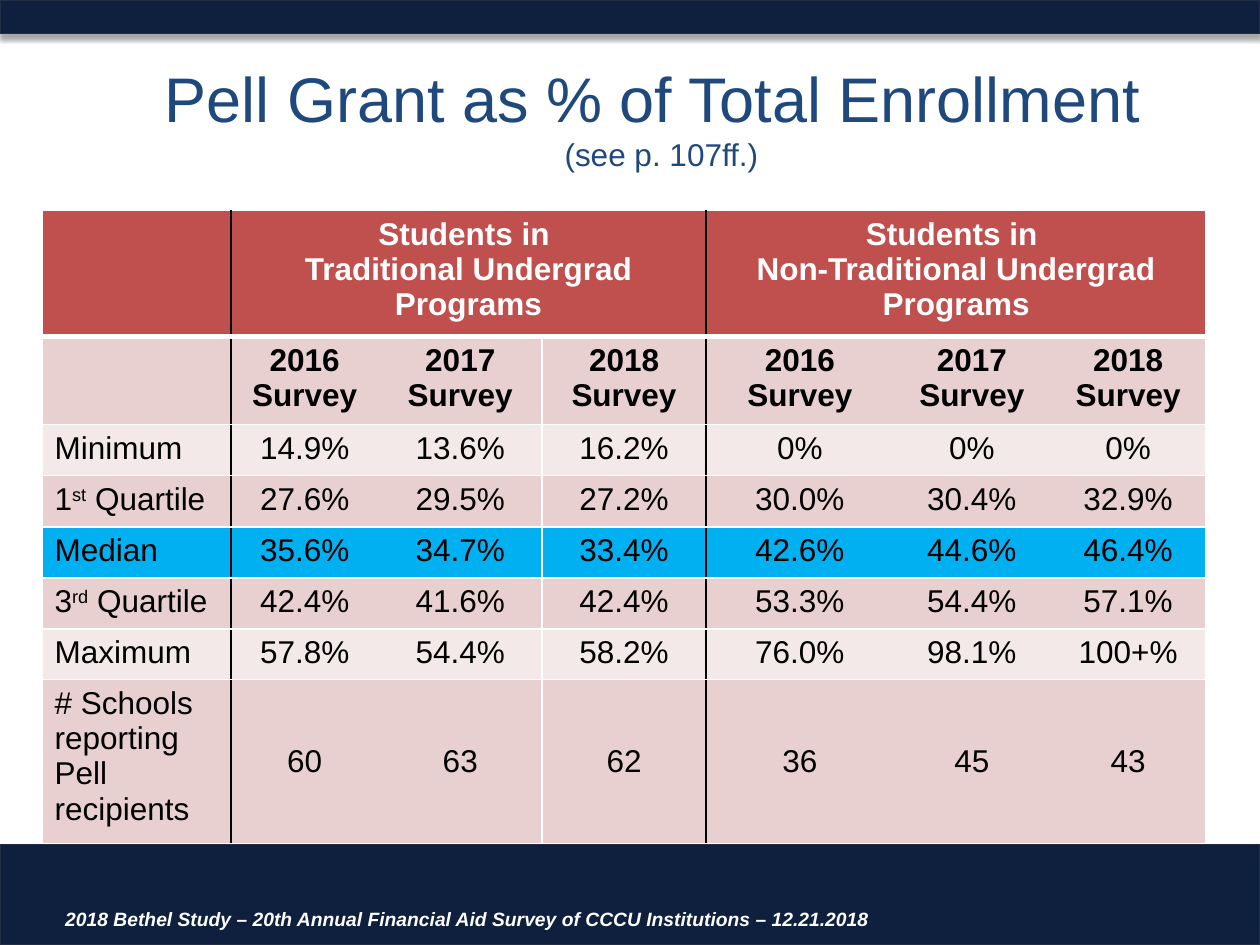
from dataclasses import dataclass
from typing import NamedTuple

from lxml.etree import SubElement
from pptx import Presentation
from pptx.dml.color import RGBColor as RGB
from pptx.enum.shapes import MSO_SHAPE as Shape
from pptx.enum.text import MSO_ANCHOR as Anchor, PP_ALIGN as Align
from pptx.oxml.ns import qn
from pptx.util import Pt


@dataclass(frozen=True)
class Theme:
    font: str = "Arial"
    navy: str = "0E203E"
    navy_line: str = "222D46"
    title: str = "1F497D"
    head: str = "C0504D"
    dark_band: str = "E8D0D0"
    light_band: str = "F4E9E9"
    highlight: str = "00B0F0"
    white: str = "FFFFFF"
    black: str = "000000"
    title_size: float = 36
    body_size: float = 18
    footer_size: float = 11


class Box(NamedTuple):
    left: float
    top: float
    width: float
    height: float

    def lengths(self) -> list:
        return [Pt(v) for v in self]


class Row(NamedTuple):
    label: str  # "|" marks the start and end of a superscript
    values: list[str]
    fill: str
    height: float = 29.2
    bold: bool = False
    anchor: Anchor = Anchor.TOP


class Edge(NamedTuple):
    color: str
    width: float = 1


T = Theme()
WHITE, BLACK, HEAD_RULE = Edge(T.white), Edge(T.black), Edge(T.white, 3)
BARS = [Box(0, 0, 720, 19.4), Box(0, 482.4, 720, 57.6)]
TABLE = Box(24, 120.2, 666, 361.4)
COL_WIDTHS = [108, 84.2, 93.6, 93.6, 107.3, 89.3, 89.3]
# Vertical rules by column boundary; boundaries not listed have none
RULES = {0: WHITE, 1: BLACK, 3: WHITE, 4: BLACK, 7: WHITE}
GROUPS = {1: "Students in \nTraditional Undergrad Programs",
          4: "Students in \nNon-Traditional Undergrad Programs"}
SURVEYS = [f"{year} Survey" for year in (2016, 2017, 2018)]
ROWS = [
    Row("", SURVEYS * 2, T.dark_band, bold=True),
    Row("Minimum", ["14.9%", "13.6%", "16.2%", "0%", "0%", "0%"], T.light_band),
    Row("1|st| Quartile", ["27.6%", "29.5%", "27.2%", "30.0%", "30.4%", "32.9%"],
        T.dark_band),
    Row("Median", ["35.6%", "34.7%", "33.4%", "42.6%", "44.6%", "46.4%"],
        T.highlight),
    Row("3|rd| Quartile", ["42.4%", "41.6%", "42.4%", "53.3%", "54.4%", "57.1%"],
        T.dark_band),
    Row("Maximum", ["57.8%", "54.4%", "58.2%", "76.0%", "98.1%", "100+%"],
        T.light_band, height=26),
    Row("# Schools reporting Pell recipients", ["60", "63", "62", "36", "45", "43"],
        T.dark_band, anchor=Anchor.MIDDLE),
]


def style(r, size: float, color: str, bold: bool = False, italic: bool = False) -> None:
    f = r.font
    f.name, f.size, f.bold, f.italic = T.font, Pt(size), bold, italic
    f.color.rgb = RGB.from_string(color)


def add_bar(s, box: Box) -> None:
    bar = s.shapes.add_shape(Shape.RECTANGLE, *box.lengths())
    bar.shadow.inherit = False
    bar.fill.solid()
    bar.fill.fore_color.rgb = RGB.from_string(T.navy)
    bar.line.color.rgb = RGB.from_string(T.navy_line)
    bar.line.width = Pt(0.75)
    effects = bar._element.spPr.find(qn("a:effectLst"))
    shadow = SubElement(effects, qn("a:outerShdw"), blurRad=str(Pt(3.1)),
                        dist=str(Pt(1.8)), dir="5400000", rotWithShape="0")
    color = SubElement(shadow, qn("a:srgbClr"), val=T.black)
    SubElement(color, qn("a:alpha"), val="35000")


def add_text(s, box: Box, text: str, anchor: Anchor = Anchor.TOP):
    """Add a wrapping text box and return its first paragraph."""
    tf = s.shapes.add_textbox(*box.lengths()).text_frame
    tf.word_wrap = True
    tf.vertical_anchor = anchor
    tf.text = text
    return tf.paragraphs[0]


def set_edges(cell, left: Edge | None, right: Edge | None, top: Edge, bottom: Edge) -> None:
    """Draw the four borders; call before filling, as the schema order requires."""
    tc_pr = cell._tc.get_or_add_tcPr()
    for side, edge in zip("LRTB", (left, right, top, bottom)):
        ln = SubElement(tc_pr, qn(f"a:ln{side}"), w=str(Pt(edge.width if edge else 0)))
        if edge:
            fill = SubElement(ln, qn("a:solidFill"))
            SubElement(fill, qn("a:srgbClr"), val=edge.color)
        else:
            SubElement(ln, qn("a:noFill"))


def fill_cell(cell, text: str, fill: str, color: str, bold: bool, align: Align) -> None:
    cell.fill.solid()
    cell.fill.fore_color.rgb = RGB.from_string(fill)
    tf = cell.text_frame
    tf.text = text.replace("|", "")
    for p in tf.paragraphs:
        p.alignment = align
        p.font.size = Pt(T.body_size)
        if "|" in text:
            p.clear()
            for i, part in enumerate(text.split("|")):
                r = p.add_run()
                r.text = part
                if i % 2:
                    r._r.get_or_add_rPr().set("baseline", "30000")
        for r in p.runs:
            style(r, T.body_size, color, bold)


def add_pell_table(s) -> None:
    table = s.shapes.add_table(len(ROWS) + 1, len(COL_WIDTHS), *TABLE.lengths()).table
    for col, width in zip(table.columns, COL_WIDTHS):
        col.width = Pt(width)

    table.rows[0].height = Pt(29.2)
    for c in range(len(COL_WIDTHS)):
        span = 3 if c in GROUPS else 1
        cell = table.cell(0, c)
        set_edges(cell, RULES.get(c), RULES.get(c + span), WHITE, HEAD_RULE)
        fill_cell(cell, GROUPS.get(c, ""), T.head, T.white, True, Align.CENTER)
    for c in GROUPS:
        table.cell(0, c).merge(table.cell(0, c + 2))

    for i, row in enumerate(ROWS, start=1):
        table.rows[i].height = Pt(row.height)
        for c, text in enumerate([row.label, *row.values]):
            cell = table.cell(i, c)
            set_edges(cell, RULES.get(c), RULES.get(c + 1),
                      HEAD_RULE if i == 1 else WHITE, WHITE)
            fill_cell(cell, text, row.fill, T.black, row.bold,
                      Align.CENTER if c else Align.LEFT)
            cell.vertical_anchor = row.anchor if c else Anchor.TOP


def main() -> None:
    prs = Presentation()
    prs.slide_width, prs.slide_height = Pt(720), Pt(540)
    s = prs.slides.add_slide(prs.slide_layouts[6])

    for box in BARS:
        add_bar(s, box)

    p = add_text(s, Box(36, 21.6, 684, 90),
                 "Pell Grant as % of Total Enrollment \v(see p. 107ff.)", Anchor.MIDDLE)
    p.alignment = Align.CENTER
    for r, size in zip(p.runs, (T.title_size, T.body_size)):
        style(r, size, T.title)

    add_pell_table(s)

    p = add_text(s, Box(30.2, 514.8, 635.8, 25.2),
                 "2018 Bethel Study – 20th Annual Financial Aid Survey of CCCU "
                 "Institutions – 12.21.2018")
    style(p.runs[0], T.footer_size, T.white, bold=True, italic=True)

    prs.save("out.pptx")


if __name__ == "__main__":
    main()
